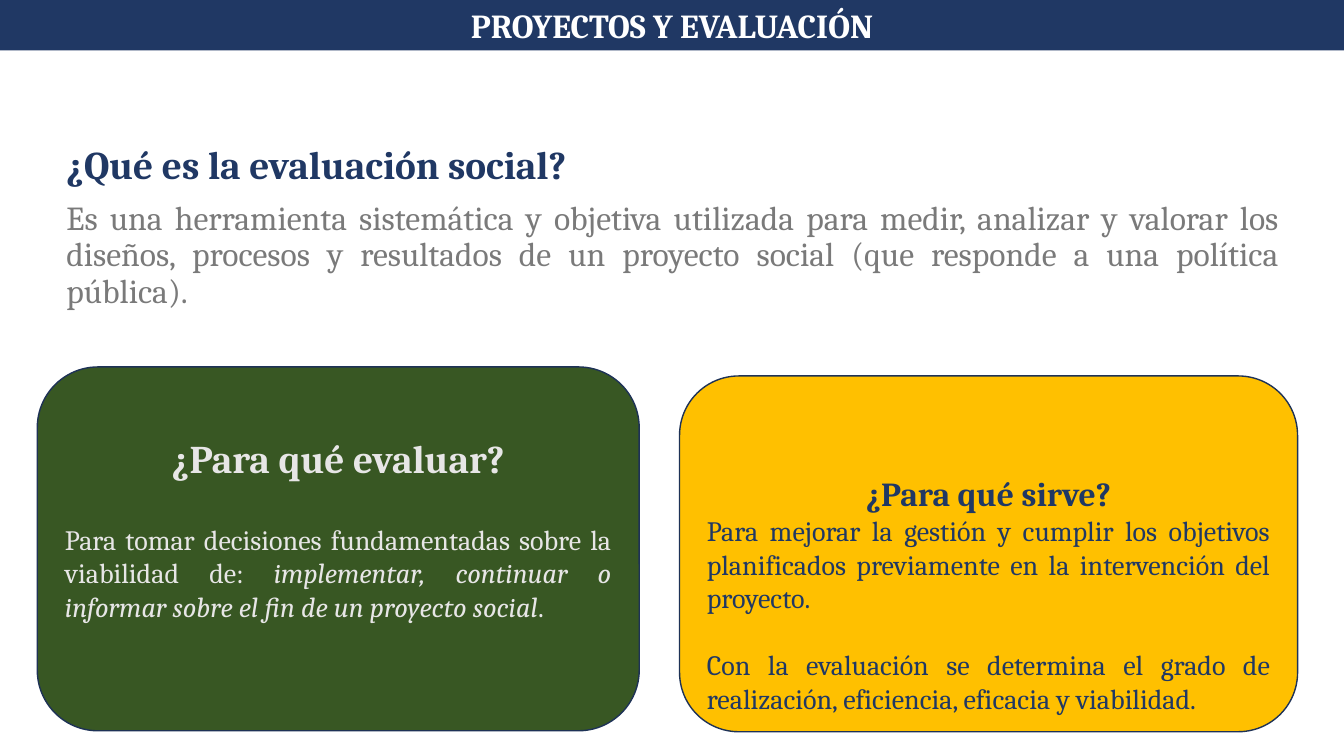
from dataclasses import dataclass

from pptx import Presentation
from pptx import util as u
from pptx.dml.color import RGBColor
from pptx.enum import shapes, text


@dataclass(frozen=True)
class Theme:
    font: str = "Cambria"
    navy: str = "203864"
    edge: str = "1E3256"
    green: str = "385723"
    gold: str = "FFC000"
    white: str = "FFFFFF"
    pale: str = "E7E6E6"
    gray: str = "7A7A7A"
    head: int = 28
    lead: int = 24
    body: int = 20


@dataclass(frozen=True)
class Para:
    """Words of a paragraph; parts between asterisks are italic."""
    words: str
    size: int
    color: str
    bold: bool = False
    align: text.PP_ALIGN = text.PP_ALIGN.JUSTIFY
    lines: float = 1.0
    before: int = 0


@dataclass(frozen=True)
class Box:
    left: float
    top: float
    width: float
    height: float
    paras: tuple[Para, ...]
    kind: shapes.MSO_SHAPE | None = None
    fill: str = ""
    line: str = ""
    anchor: text.MSO_ANCHOR = text.MSO_ANCHOR.TOP
    foot: float = 0.05


T = Theme()
MID = text.PP_ALIGN.CENTER
ROUND = shapes.MSO_SHAPE.ROUNDED_RECTANGLE

BOXES = (
    Box(0, 0, 13.33, 0.5,
        (Para("PROYECTOS Y EVALUACIÓN", T.lead, T.white, True, MID),),
        shapes.MSO_SHAPE.RECTANGLE, T.navy),
    Box(0.56, 0.83, 12.22, 6.22, (
        Para("¿Qué es la evaluación social?", T.head, T.navy, True,
             lines=2.1, before=10),
        Para("Es una herramienta sistemática y objetiva utilizada para medir, "
             "analizar y valorar los diseños, procesos y resultados de un "
             "proyecto social (que responde a una política pública).",
             T.lead, T.gray, lines=0.9, before=10))),
    Box(0.37, 3.64, 5.97, 3.61, (
        Para("¿Para qué evaluar?", T.head, T.pale, True, MID),
        Para("Para tomar decisiones fundamentadas sobre la viabilidad de: "
             "*implementar, continuar o informar sobre el fin de un "
             "proyecto social*.", T.body, T.pale, before=29)),
        ROUND, T.green, T.edge, text.MSO_ANCHOR.MIDDLE, 0.45),
    Box(6.74, 3.73, 6.13, 3.53, (
        Para("¿Para qué sirve?", T.lead, T.navy, True, MID, lines=3.0),
        Para("Para mejorar la gestión y cumplir los objetivos planificados "
             "previamente en la intervención del proyecto.", T.body, T.navy),
        Para("Con la evaluación se determina el grado de realización, "
             "eficiencia, eficacia y viabilidad.", T.body, T.navy,
             before=24)),
        ROUND, T.gold, T.edge, text.MSO_ANCHOR.MIDDLE),
)


def write(frame, paras: tuple[Para, ...]) -> None:
    for i, item in enumerate(paras):
        para = frame.add_paragraph() if i else frame.paragraphs[0]
        para.alignment = item.align
        para.line_spacing = item.lines
        para.space_before = u.Pt(item.before)
        font = para.font
        font.name, font.size, font.bold = T.font, u.Pt(item.size), item.bold
        font.color.rgb = RGBColor.from_string(item.color)
        for j, part in enumerate(item.words.split("*")):
            run = para.add_run()
            run.text = part
            if j % 2:
                run.font.italic = True


def draw(slide, box: Box) -> None:
    area = [u.Inches(n) for n in (box.left, box.top, box.width, box.height)]
    if box.kind is None:
        shape = slide.shapes.add_textbox(*area)
    else:
        shape = slide.shapes.add_shape(box.kind, *area)
        shape.shadow.inherit = False
        shape.fill.solid()
        shape.fill.fore_color.rgb = RGBColor.from_string(box.fill)
        if box.line:
            shape.line.color.rgb = RGBColor.from_string(box.line)
            shape.line.width = u.Pt(1)
        else:
            shape.line.fill.background()
    frame = shape.text_frame
    frame.word_wrap = True
    frame.vertical_anchor = box.anchor
    frame.margin_bottom = u.Inches(box.foot)
    write(frame, box.paras)


def main() -> None:
    deck = Presentation()
    deck.slide_width, deck.slide_height = u.Inches(13.33), u.Inches(7.5)
    slide = deck.slides.add_slide(deck.slide_layouts[6])
    for box in BOXES:
        draw(slide, box)
    deck.save("out.pptx")


if __name__ == "__main__":
    main()
